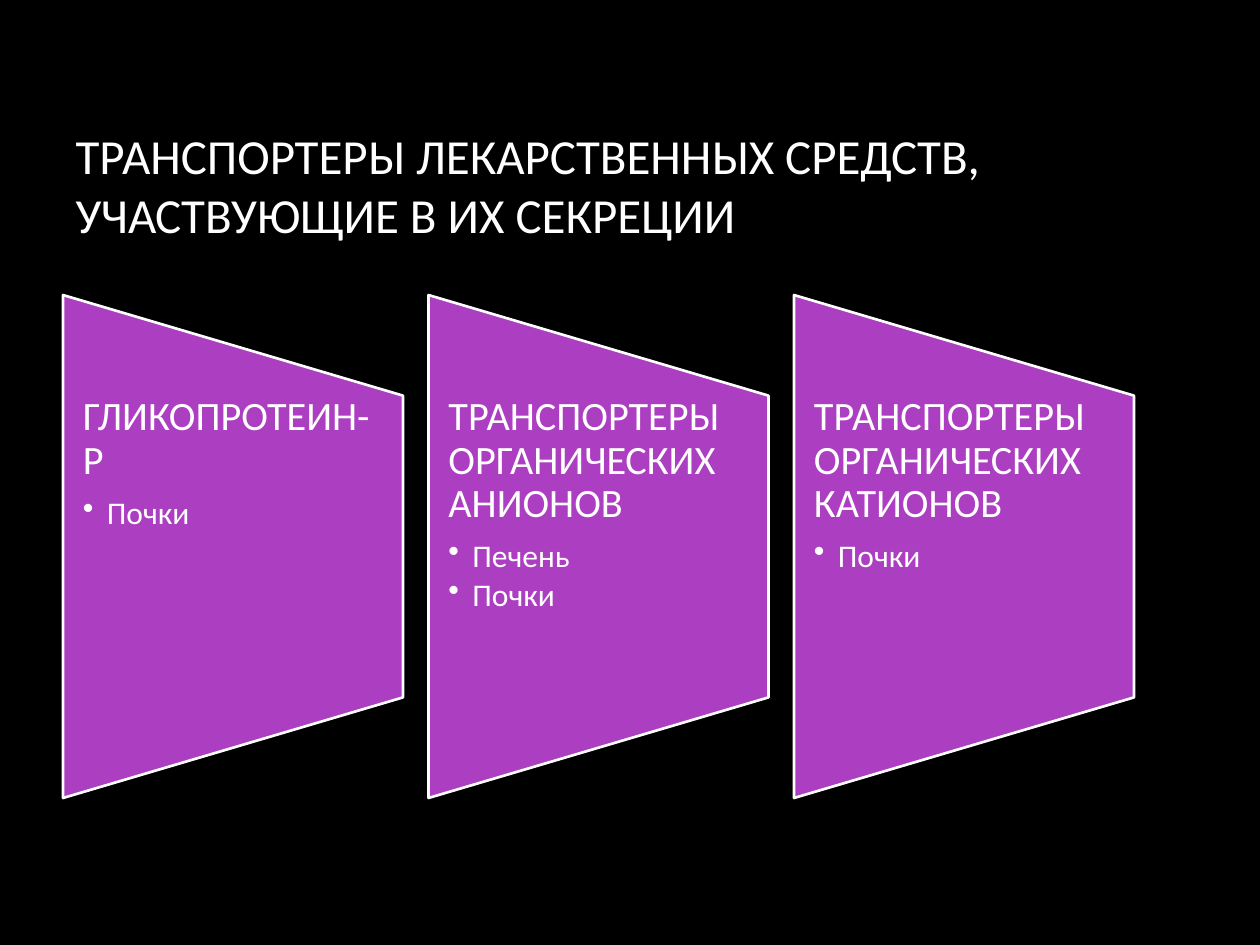
"""Build a slide on the drug transporters that take part in secretion."""

from dataclasses import dataclass

from lxml import etree
from pptx import Presentation
from pptx.dml.color import RGBColor
from pptx.enum.shapes import MSO_SHAPE
from pptx.enum.text import MSO_ANCHOR, MSO_AUTO_SIZE, PP_ALIGN
from pptx.oxml.ns import qn
from pptx.util import Emu, Pt

PANEL_SHAPE = MSO_SHAPE.FLOWCHART_MANUAL_OPERATION
TOP, MIDDLE = MSO_ANCHOR.TOP, MSO_ANCHOR.MIDDLE
LEFT = PP_ALIGN.LEFT
NO_AUTO_SIZE = MSO_AUTO_SIZE.NONE

PIXELS_PER_INCH = 126
FONT = "Calibri"
BLACK, WHITE, PURPLE = "000000", "FFFFFF", "AC3EC1"

PANEL_LEFT, PANEL_TOP = 63, 295
PANEL_WIDTH, PANEL_HEIGHT = 340, 503
PANEL_STEP = 365.5
TEXT_TOP, TEXT_HEIGHT = 396, 301
TEXT_INSET, BULLET_INDENT = 20, 24


@dataclass(frozen=True)
class Transporter:
    heading: str
    organs: tuple[str, ...]


TITLE = "ТРАНСПОРТЕРЫ ЛЕКАРСТВЕННЫХ СРЕДСТВ, УЧАСТВУЮЩИЕ В ИХ СЕКРЕЦИИ"
TRANSPORTERS = (
    Transporter("ГЛИКОПРОТЕИН-Р", ("Почки",)),
    Transporter("ТРАНСПОРТЕРЫ ОРГАНИЧЕСКИХ АНИОНОВ", ("Печень", "Почки")),
    Transporter("ТРАНСПОРТЕРЫ ОРГАНИЧЕСКИХ КАТИОНОВ", ("Почки",)),
)


def px(length: float) -> Emu:
    return Emu(round(length * 914400 / PIXELS_PER_INCH))


def color(value: str) -> RGBColor:
    return RGBColor.from_string(value)


def add_run(paragraph, text: str, size: float) -> None:
    run = paragraph.add_run()
    run.text = text
    run.font.name = FONT
    run.font.size = Pt(size)
    run.font.color.rgb = color(WHITE)


def add_bullet(paragraph) -> None:
    paragraph.level = 1
    properties = paragraph._p.get_or_add_pPr()
    properties.set("marL", str(px(BULLET_INDENT)))
    properties.set("indent", str(-px(BULLET_INDENT)))
    etree.SubElement(properties, qn("a:buChar")).set("char", "•")


def format_paragraph(paragraph, space_after: float) -> None:
    paragraph.alignment = LEFT
    paragraph.line_spacing = 0.9
    paragraph.space_after = Pt(space_after)


def add_title(slide) -> None:
    title = slide.shapes.title
    title.left, title.top, title.width, title.height = px(63), px(84), px(1071), px(200)
    frame = title.text_frame
    frame.word_wrap = True
    frame.auto_size = NO_AUTO_SIZE
    frame.vertical_anchor = MIDDLE
    paragraph = frame.paragraphs[0]
    paragraph.alignment = LEFT
    add_run(paragraph, TITLE, 28)


def add_panel(slide, left: float) -> None:
    offset = (PANEL_HEIGHT - PANEL_WIDTH) / 2
    shape = slide.shapes.add_shape(
        PANEL_SHAPE,
        px(left - offset), px(PANEL_TOP + offset), px(PANEL_HEIGHT), px(PANEL_WIDTH),
    )
    shape.rotation = 270
    shape.shadow.inherit = False
    shape.fill.solid()
    shape.fill.fore_color.rgb = color(PURPLE)
    shape.line.color.rgb = color(WHITE)
    shape.line.width = Pt(1.5)


def add_panel_text(slide, left: float, transporter: Transporter) -> None:
    box = slide.shapes.add_textbox(px(left), px(TEXT_TOP), px(PANEL_WIDTH), px(TEXT_HEIGHT))
    frame = box.text_frame
    frame.word_wrap = True
    frame.vertical_anchor = TOP
    frame.margin_left = frame.margin_right = px(TEXT_INSET)
    frame.margin_top = frame.margin_bottom = 0
    heading = frame.paragraphs[0]
    format_paragraph(heading, 8)
    add_run(heading, transporter.heading, 23)
    for organ in transporter.organs:
        paragraph = frame.add_paragraph()
        add_bullet(paragraph)
        format_paragraph(paragraph, 2.7)
        add_run(paragraph, organ, 18)


def main() -> None:
    presentation = Presentation()
    presentation.slide_width, presentation.slide_height = px(1260), px(945)
    slide = presentation.slides.add_slide(presentation.slide_layouts[5])
    slide.background.fill.solid()
    slide.background.fill.fore_color.rgb = color(BLACK)
    add_title(slide)
    for index, transporter in enumerate(TRANSPORTERS):
        left = PANEL_LEFT + index * PANEL_STEP
        add_panel(slide, left)
        add_panel_text(slide, left, transporter)
    presentation.save("out.pptx")


if __name__ == "__main__":
    main()
